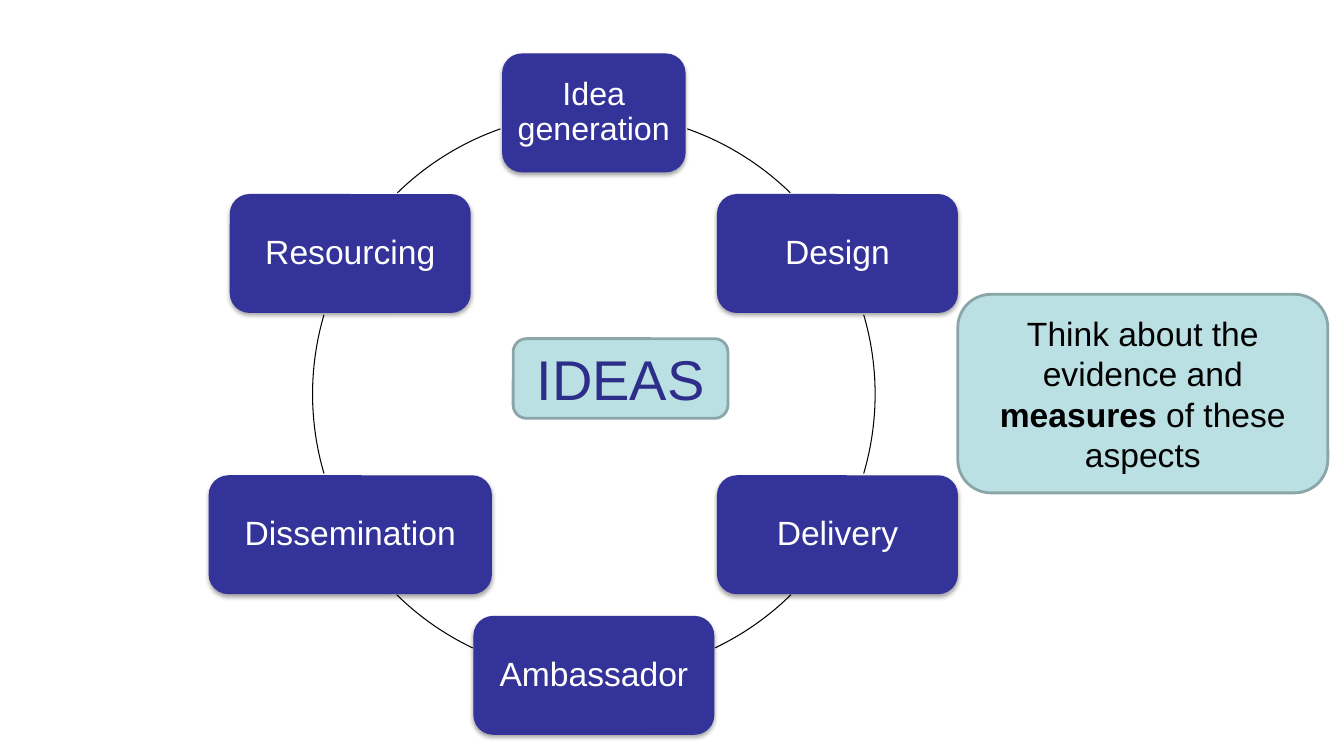
import math

import lxml.etree
import pptx
import pptx.dml.color
import pptx.enum.shapes
import pptx.enum.text
import pptx.oxml.ns
import pptx.util

Inches, Pt = pptx.util.Inches, pptx.util.Pt
RGBColor = pptx.dml.color.RGBColor
Preset = pptx.enum.shapes.MSO_SHAPE

# Content: stages clockwise from the top as (label, width, text size)
STAGES = [
    ("Idea generation", 1.82, 23),
    ("Design", 2.39, 24),
    ("Delivery", 2.39, 24),
    ("Ambassador", 2.39, 24),
    ("Dissemination", 2.81, 24),
    ("Resourcing", 2.39, 24),
]
CALLOUT = [("Think about the evidence and ", False), ("measures", True),
           (" of these aspects", False)]
HUB = [("IDEAS", False)]

# Colours
INDIGO = RGBColor(0x33, 0x33, 0x99)
DEEP_INDIGO = RGBColor(0x2D, 0x2D, 0x8A)
PALE_TEAL = RGBColor(0xBB, 0xE0, 0xE3)
GREY_TEAL = RGBColor(0x8A, 0xA6, 0xA8)
WHITE = RGBColor(0xFF, 0xFF, 0xFF)
BLACK = RGBColor(0, 0, 0)

# Geometry in inches; arc angles in degrees clockwise from three o'clock
CENTRE_X, CENTRE_Y, RADIUS = 5.89, 3.91, 2.79
STAGE_HEIGHT = 1.18
STAGE_MARGIN = 0.05
RIGHT_ARCS = [(289.4, 314.3), (343.6, 376.4), (45.5, 64.5)]
LEFT_ARCS = [(180 - end, 180 - start) for start, end in RIGHT_ARCS]


def add_preset(page, preset, left, top, width, height):
    shape = page.shapes.add_shape(
        preset, Inches(left), Inches(top), Inches(width), Inches(height))
    shape.shadow.inherit = False
    return shape


def add_box(page, left, top, width, height, fill, outline=None):
    box = add_preset(page, Preset.ROUNDED_RECTANGLE, left, top, width, height)
    box.fill.solid()
    box.fill.fore_color.rgb = fill
    if outline is None:
        box.line.fill.background()
    else:
        box.line.color.rgb = outline
        box.line.width = Pt(2)
    return box


def write(box, spans, size, colour):
    frame = box.text_frame
    frame.word_wrap = True
    frame.vertical_anchor = pptx.enum.text.MSO_ANCHOR.MIDDLE
    para = frame.paragraphs[0]
    para.alignment = pptx.enum.text.PP_ALIGN.CENTER
    for text, bold in spans:
        span = para.add_run()
        span.text = text
        span.font.name = "Arial"
        span.font.size = Pt(size)
        span.font.bold = bold
        span.font.color.rgb = colour
    return para


def add_soft_shadow(box):
    qn = pptx.oxml.ns.qn
    effects = box._element.spPr.find(qn("a:effectLst"))
    shadow = lxml.etree.SubElement(
        effects, qn("a:outerShdw"), blurRad=str(Pt(3.1)), dist=str(Pt(1.8)),
        dir="5400000", rotWithShape="0")
    colour = lxml.etree.SubElement(shadow, qn("a:srgbClr"), val=str(BLACK))
    lxml.etree.SubElement(colour, qn("a:alpha"), val="35000")


def add_arc(page, start, end):
    arc = add_preset(page, Preset.ARC, CENTRE_X - RADIUS, CENTRE_Y - RADIUS,
                     2 * RADIUS, 2 * RADIUS)
    # One degree is 60000 units, and an adjustment of 1 is 100000 units
    for index, angle in enumerate((start, end)):
        arc.adjustments[index] = angle % 360 * 0.6
    arc.fill.background()
    arc.line.color.rgb = BLACK
    arc.line.width = Pt(0.75)


def main():
    deck = pptx.Presentation()
    deck.slide_width, deck.slide_height = Inches(13.33), Inches(7.5)
    page = deck.slides.add_slide(deck.slide_layouts[6])

    # Ring between the stages
    for start, end in RIGHT_ARCS + LEFT_ARCS:
        add_arc(page, start, end)

    # Stages spaced evenly round the ring, with slim side margins for long words
    for index, (label, width, size) in enumerate(STAGES):
        angle = math.tau * index / len(STAGES)
        middle_x = CENTRE_X + RADIUS * math.sin(angle)
        middle_y = CENTRE_Y - RADIUS * math.cos(angle)
        box = add_box(page, middle_x - width / 2, middle_y - STAGE_HEIGHT / 2,
                      width, STAGE_HEIGHT, INDIGO)
        add_soft_shadow(box)
        frame = box.text_frame
        frame.margin_left = frame.margin_right = Inches(STAGE_MARGIN)
        para = write(box, [(label, False)], size, WHITE)
        para.line_spacing = 0.9

    # Callout and hub
    callout = add_box(page, 9.5, 2.92, 3.67, 1.97, PALE_TEAL, GREY_TEAL)
    write(callout, CALLOUT, 24, BLACK)
    hub = add_box(page, 5.09, 3.36, 2.13, 0.79, PALE_TEAL, GREY_TEAL)
    write(hub, HUB, 40, DEEP_INDIGO)

    deck.save("out.pptx")


if __name__ == "__main__":
    main()
